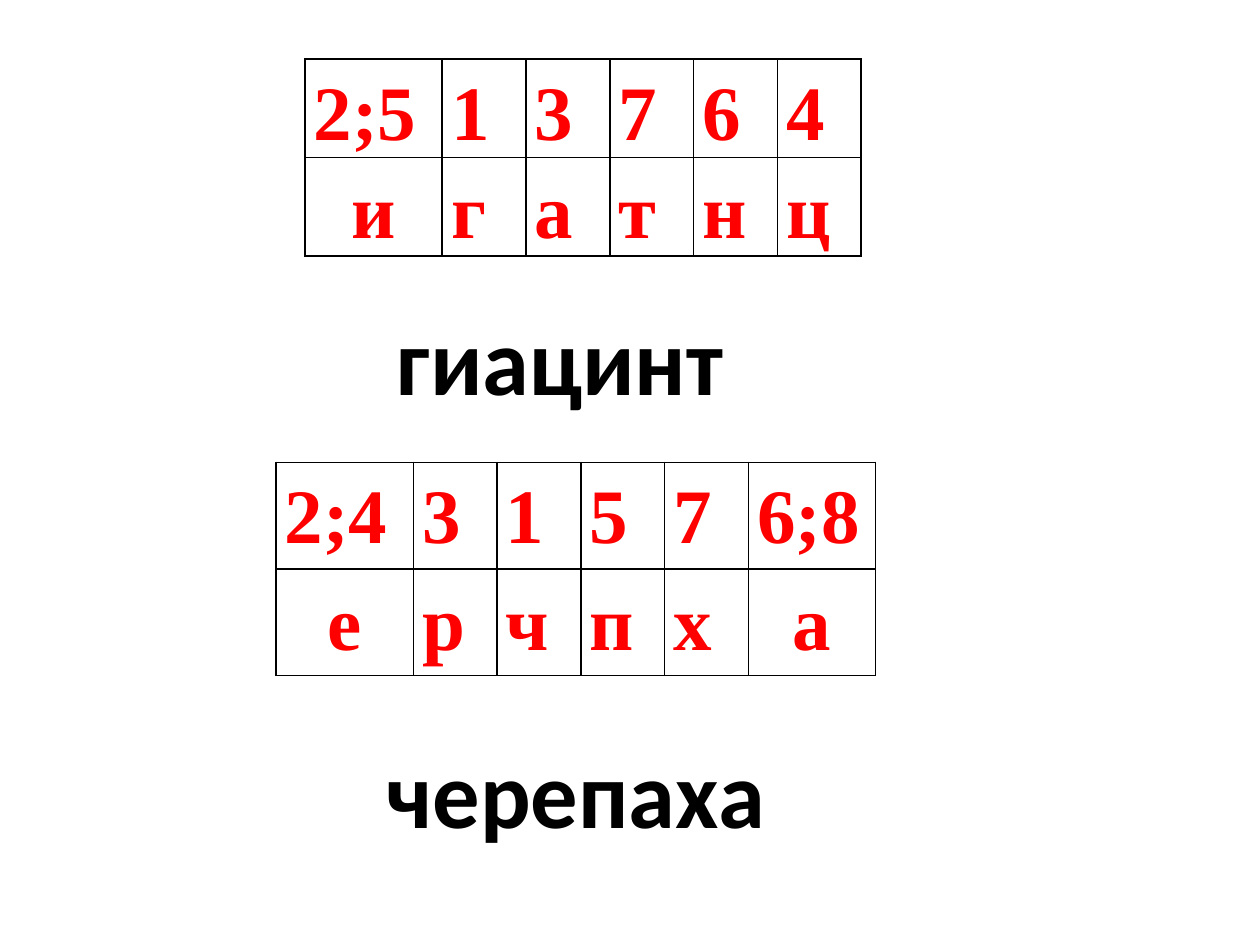
import pptx
import pptx.util
import pptx.dml.color
import pptx.enum.text
import pptx.oxml
import pptx.oxml.ns

RED = pptx.dml.color.RGBColor(255, 0, 0)
BLACK = pptx.dml.color.RGBColor(0, 0, 0)
ALIGN = pptx.enum.text.PP_ALIGN


def write(frame, text, font, size, color, bold=True, align=ALIGN.LEFT, space=None):
    para = frame.paragraphs[0]
    para.alignment = align
    para.line_spacing = space
    run = para.add_run()
    run.text = text
    run.font.name = font
    run.font.size = pptx.util.Pt(size)
    run.font.bold = bold
    run.font.color.rgb = color


class Sheet:
    COLS, ROWS = 100, 75
    KEY = dict(font="Times New Roman", size=44, color=RED, space=1.15)
    WORD = dict(font="Calibri", size=54, color=BLACK)
    SIDE = 0.7

    def __init__(self, deck):
        self.deck = deck
        self.slide = deck.slides.add_slide(deck.slide_layouts[6])

    def across(self, cols):
        return int(self.deck.slide_width * cols / self.COLS)

    def down(self, rows):
        return int(self.deck.slide_height * rows / self.ROWS)

    def border(self, cell):
        props = cell._tc.get_or_add_tcPr()
        for side in "LRTB":
            props.append(pptx.oxml.parse_xml(
                f'<a:ln{side} {pptx.oxml.ns.nsdecls("a")} w="{pptx.util.Pt(1)}">'
                f'<a:solidFill><a:srgbClr val="{BLACK}"/></a:solidFill></a:ln{side}>'))

    def table(self, left, top, widths, height, lines):
        shape = self.slide.shapes.add_table(
            len(lines), len(widths), self.across(left), self.down(top),
            self.across(sum(widths)), self.down(height * len(lines)))
        grid = shape.table
        grid.first_row = grid.horz_banding = False
        for col, width in zip(grid.columns, widths):
            col.width = self.across(width)
        for r, line in enumerate(lines):
            grid.rows[r].height = self.down(height)
            for c, text in enumerate(line):
                cell = grid.cell(r, c)
                cell.margin_left = cell.margin_right = self.across(self.SIDE)
                cell.margin_top = cell.margin_bottom = 0
                self.border(cell)
                cell.fill.background()
                wide = len(lines[0][c]) > 1
                align = ALIGN.CENTER if r and wide else ALIGN.LEFT
                write(cell.text_frame, text, align=align, **self.KEY)

    def word(self, left, top, width, height, text):
        box = self.slide.shapes.add_textbox(
            self.across(left), self.down(top), self.across(width), self.down(height))
        frame = box.text_frame
        frame.word_wrap = False
        frame.auto_size = pptx.enum.text.MSO_AUTO_SIZE.SHAPE_TO_FIT_TEXT
        write(frame, text, **self.WORD)


def main():
    deck = pptx.Presentation()
    deck.slide_width = pptx.util.Inches(10)
    deck.slide_height = pptx.util.Inches(7.5)
    sheet = Sheet(deck)
    slim = [6.65] * 4
    sheet.table(24.2, 4.7, [10.9, *slim, 6.65], 7.8,
                [["2;5", *"13764"], "игатнц"])
    sheet.word(30.5, 23.4, 28.2, 10.1, "гиацинт")
    sheet.table(21.9, 36.7, [10.9, *slim, 10.1], 8.45,
                [["2;4", *"3157", "6;8"], "ерчпха"])
    sheet.word(29.7, 57.8, 32.4, 10.1, "черепаха")
    deck.save("out.pptx")


if __name__ == "__main__":
    main()
